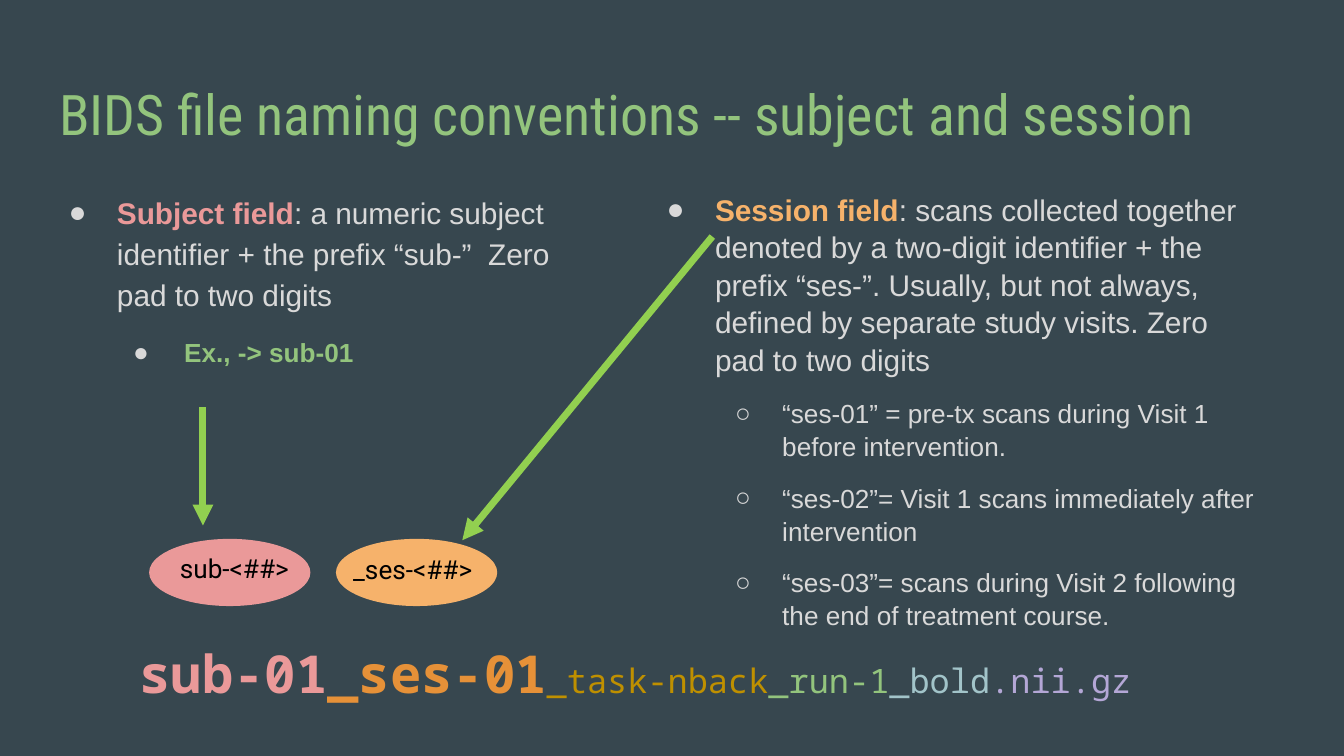
from lxml.etree import SubElement
from pptx import Presentation
from pptx.dml.color import RGBColor
from pptx.enum.shapes import MSO_CONNECTOR as Connector, MSO_SHAPE as Shape
from pptx.enum.text import MSO_ANCHOR as Anchor, MSO_AUTO_SIZE as AutoSize, PP_ALIGN as Align
from pptx.oxml.ns import qn
from pptx.util import Pt

PX = 9144
COLORS = {
    "background": "37474F", "text": "D9D9D9", "green": "93C47D", "pink": "EA9999",
    "peach": "F6B26B", "orange": "E69138", "gold": "BF9000", "teal": "A2C4C9",
    "lavender": "B4A7D6", "arrow": "92D050", "black": "000000",
}


def px(length):
    """Turn whole px, 100 to the inch, into EMU."""
    return length * PX


def color(name):
    """Look up a named colour."""
    return RGBColor.from_string(COLORS[name])


def add_run(paragraph, text, size, font, color_name, bold=False):
    """Append one formatted run to a paragraph."""
    run = paragraph.add_run()
    run.text = text
    run.font.size = Pt(size)
    run.font.name = font
    run.font.bold = bold
    run.font.color.rgb = color(color_name)


def prepare_frame(shape):
    """Give a text shape even insets, wrapping and top anchoring."""
    frame = shape.text_frame
    frame.auto_size = AutoSize.NONE
    frame.word_wrap = True
    frame.vertical_anchor = Anchor.TOP
    frame.margin_left = frame.margin_right = frame.margin_top = frame.margin_bottom = px(10)
    return frame


def place(shape, box):
    """Move a shape to a box of left, top, width and height."""
    shape.left, shape.top, shape.width, shape.height = map(px, box)


def add_label(slide, box, runs, line_spacing=1.0):
    """Add a one-paragraph text box made of the given runs."""
    frame = prepare_frame(slide.shapes.add_textbox(*map(px, box)))
    paragraph = frame.paragraphs[0]
    paragraph.line_spacing = line_spacing
    for run in runs:
        add_run(paragraph, *run)


def set_bullet(paragraph, character, margin, indent):
    """Give a paragraph a hanging bullet."""
    properties = paragraph._p.get_or_add_pPr()
    properties.set("marL", str(px(margin)))
    properties.set("indent", str(px(indent)))
    bullet_color = SubElement(properties, qn("a:buClr"))
    SubElement(bullet_color, qn("a:srgbClr"), val=COLORS["text"])
    SubElement(properties, qn("a:buFont"), typeface="Arial")
    SubElement(properties, qn("a:buChar"), char=character)


def fill_title(placeholder, box, text):
    """Place and write the slide title."""
    place(placeholder, box)
    paragraph = prepare_frame(placeholder).paragraphs[0]
    paragraph.alignment = Align.LEFT
    add_run(paragraph, text, 30, "Roboto Condensed", "green")


def fill_field_list(placeholder, box, field, definition, examples, style):
    """Write a field definition and its examples as a two-level list."""
    place(placeholder, box)
    frame = prepare_frame(placeholder)
    heading = frame.paragraphs[0]
    heading.line_spacing = style["spacing"]
    heading.space_before = heading.space_after = Pt(0)
    set_bullet(heading, "●", 50, -36)
    add_run(heading, field, 16, "Arial", style["field"], True)
    add_run(heading, definition, 16, "Arial", "text")
    for number, example in enumerate(examples, 1):
        paragraph = frame.add_paragraph()
        paragraph.level = 1
        paragraph.line_spacing = style["spacing"]
        paragraph.space_before = Pt(10)
        paragraph.space_after = Pt(10 if number == len(examples) else 0)
        set_bullet(paragraph, style["bullet"], 100, style["indent"])
        add_run(paragraph, example, 14, "Arial", style["example"], style["bold"])


def add_field_badge(slide, box, fill, text, offset):
    """Add an ellipse with its pattern label, shifted by offset."""
    left, top, _, _ = box
    ellipse = slide.shapes.add_shape(Shape.OVAL, *map(px, box))
    ellipse.shadow.inherit = False
    ellipse.fill.solid()
    ellipse.fill.fore_color.rgb = color(fill)
    ellipse.line.fill.background()
    label_box = (left + offset[0], top + offset[1], 144, 44)
    add_label(slide, label_box, [(text, 14, "Roboto", "black")])


def add_arrow(slide, start, end):
    """Add a straight arrow between two points."""
    arrow = slide.shapes.add_connector(Connector.STRAIGHT, *map(px, start + end))
    arrow.line.color.rgb = color("arrow")
    arrow.line.width = Pt(3.75)
    SubElement(arrow.line._get_or_add_ln(), qn("a:tailEnd"), type="triangle")
    SubElement(arrow._element.spPr, qn("a:effectLst"))


def add_file_name(slide, box):
    """Add the sample file name, one colour for each part."""
    parts = [
        ("sub-01", 28, "pink", True), ("_ses-01", 28, "orange", True),
        ("_task-nback", 18, "gold", False), ("_run-1", 18, "green", False),
        ("_bold", 18, "teal", False), (".nii.gz", 18, "lavender", False),
    ]
    runs = [(text, size, "Noto Sans Mono", name, bold) for text, size, name, bold in parts]
    add_label(slide, box, runs, 1.15)


def build_naming_slide(presentation):
    """Build the slide on subject and session fields."""
    slide = presentation.slides.add_slide(presentation.slide_layouts[3])
    slide.background.fill.solid()
    slide.background.fill.fore_color.rgb = color("background")
    title, subject, session = slide.placeholders
    fill_title(title, (34, 49, 932, 63),
               "BIDS file naming conventions -- subject and session")
    fill_field_list(
        subject, (27, 131, 396, 193), "Subject field",
        ": a numeric subject identifier + the prefix “sub-”  Zero pad to two digits",
        ["Ex., -> sub-01"],
        {"field": "pink", "example": "green", "bold": True,
         "bullet": "●", "indent": -38, "spacing": 1.15})
    add_file_name(slide, (94, 460, 872, 67))
    add_field_badge(slide, (111, 401, 120, 50), "pink", "sub-<##>", (13, 0))
    add_field_badge(slide, (250, 401, 120, 50), "peach", "_ses-<##>", (3, 1))
    fill_field_list(
        session, (472, 131, 476, 349), "Session field",
        ": scans collected together denoted by a two-digit identifier + the prefix “ses-”. "
        "Usually, but not always, defined by separate study visits. Zero pad to two digits",
        ["“ses-01” = pre-tx scans during Visit 1 before intervention.",
         "“ses-02”= Visit 1 scans immediately after intervention",
         "“ses-03”= scans during Visit 2 following the end of treatment course."],
        {"field": "peach", "example": "text", "bold": False,
         "bullet": "○", "indent": -35, "spacing": 1.05})
    add_arrow(slide, (151, 303), (151, 391))
    add_arrow(slide, (530, 176), (344, 402))


def main():
    """Create and save the presentation."""
    presentation = Presentation()
    presentation.slide_width = px(1000)
    presentation.slide_height = px(1000) * 9 // 16
    build_naming_slide(presentation)
    presentation.save("out.pptx")


if __name__ == "__main__":
    main()
